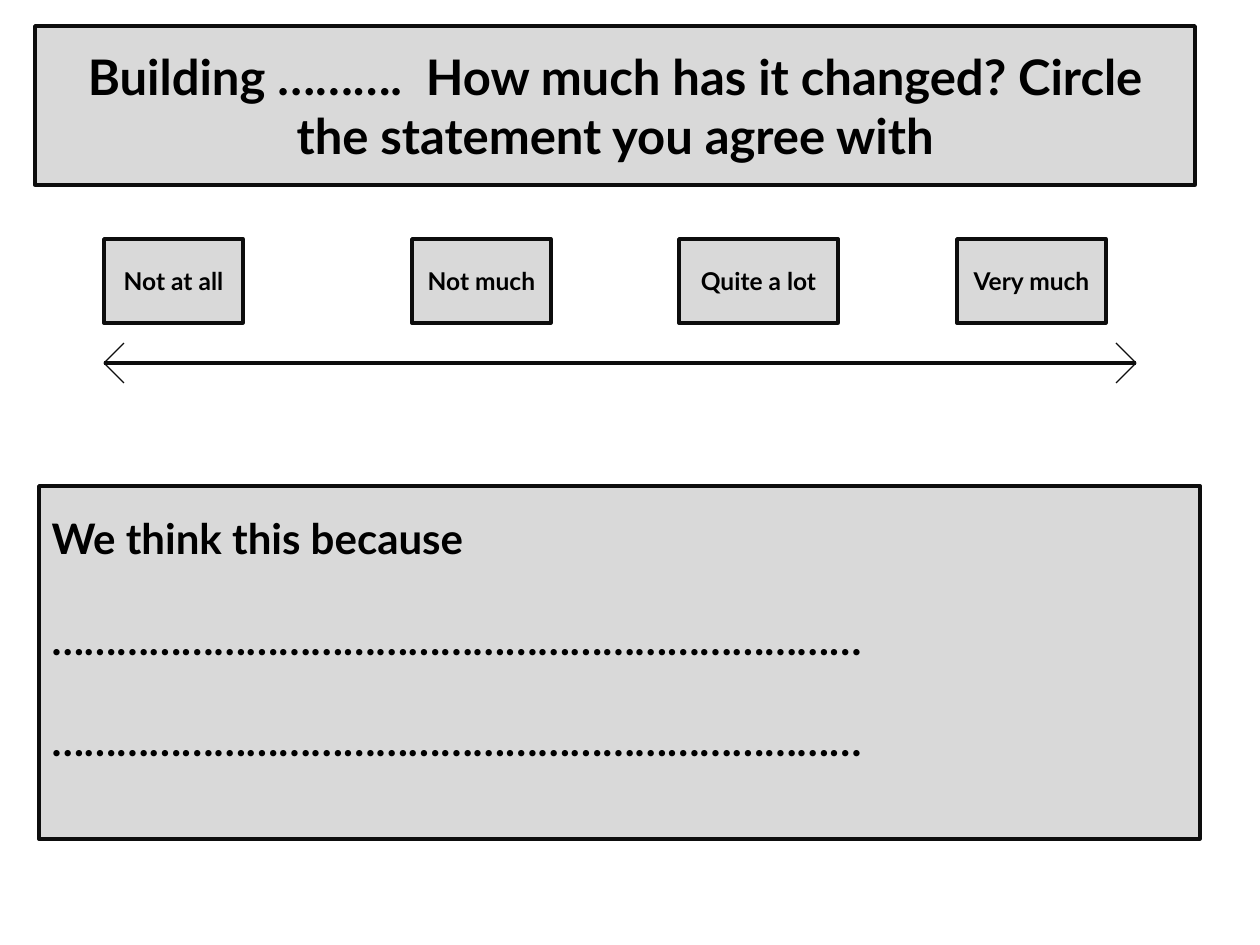
from dataclasses import dataclass
from pptx import Presentation
from pptx.dml.color import RGBColor as Rgb
from pptx.enum.shapes import MSO_CONNECTOR as Link, MSO_SHAPE as Form
from pptx.enum.text import MSO_ANCHOR as Anchor, MSO_AUTO_SIZE as Fit, PP_ALIGN as Align
from pptx.oxml.ns import qn
from pptx.util import Emu, Pt


@dataclass
class Theme:
    fill: Rgb = Rgb(0xD9, 0xD9, 0xD9)
    edge: Rgb = Rgb(0x0D, 0x0D, 0x0D)
    ink: Rgb = Rgb(0, 0, 0)
    font: str = "Lato"
    title: int = 28
    body: int = 24
    label: int = 14
    border: int = 2
    scale: float = 2.25
    tip: float = 0.75


theme = Theme()


def px(n):
    return Emu(round(n * 914400 / 126))


def panel(shape, box, lines, size, align, anchor):
    for name, n in zip(("left", "top", "width", "height"), box):
        setattr(shape, name, px(n))
    shape.fill.solid()
    shape.fill.fore_color.rgb = theme.fill
    shape.line.color.rgb = theme.edge
    shape.line.width = Pt(theme.border)
    frame = shape.text_frame
    frame.text = "\n".join(lines)
    look = {"word_wrap": True, "auto_size": Fit.NONE, "vertical_anchor": anchor}
    for name, value in look.items():
        setattr(frame, name, value)
    for para in frame.paragraphs:
        look = {"alignment": align, "line_spacing": 1.0, "space_before": Pt(0)}
        for name, value in look.items():
            setattr(para, name, value)
        font = para.runs[0].font
        look = {"name": theme.font, "size": Pt(size), "bold": True}
        for name, value in look.items():
            setattr(font, name, value)
        font.color.rgb = theme.ink
    return frame


deck = Presentation()
deck.slide_width, deck.slide_height = px(1260), px(945)
slide = deck.slides.add_slide(deck.slide_layouts[1])
shapes = slide.shapes

panel(
    shapes.title, (35, 26, 1160, 159),
    ["Building ……….  How much has it changed? Circle the statement you agree with"],
    theme.title, Align.CENTER, Anchor.MIDDLE,
)

dots = "…" * 25
frame = panel(
    slide.placeholders[1], (39, 486, 1161, 353),
    ["We think this because", dots, dots],
    theme.body, Align.LEFT, Anchor.TOP,
)
frame.margin_top = px(26)
for row, para in enumerate(frame.paragraphs):
    para.space_before = Pt(29 if row else 0)
    props = para._p.get_or_add_pPr()
    props.set("marL", "0")
    props.set("indent", "0")
    props.append(props.makeelement(qn("a:buNone"), {}))

labels = [
    ("Not at all", 104, 139),
    ("Not much", 412, 139),
    ("Quite a lot", 679, 159),
    ("Very much", 957, 149),
]
for text, left, width in labels:
    box = shapes.add_shape(Form.RECTANGLE, 0, 0, 0, 0)
    box.shadow.inherit = False
    panel(box, (left, 239, width, 84), [text], theme.label, Align.CENTER, Anchor.MIDDLE)

start, end, mid, tip = 104, 1136, 363, 20
lines = [(start, end, mid, theme.scale)]
for x, step in ((start, tip), (end, -tip)):
    for y in (mid - tip, mid + tip):
        lines.append((x, x + step, y, theme.tip))
for x, to, y, width in lines:
    line = shapes.add_connector(Link.STRAIGHT, px(x), px(mid), px(to), px(y))
    line.line.color.rgb = theme.edge
    line.line.width = Pt(width)
    props = line._element.spPr
    props.append(props.makeelement(qn("a:effectLst"), {}))

deck.save("out.pptx")
